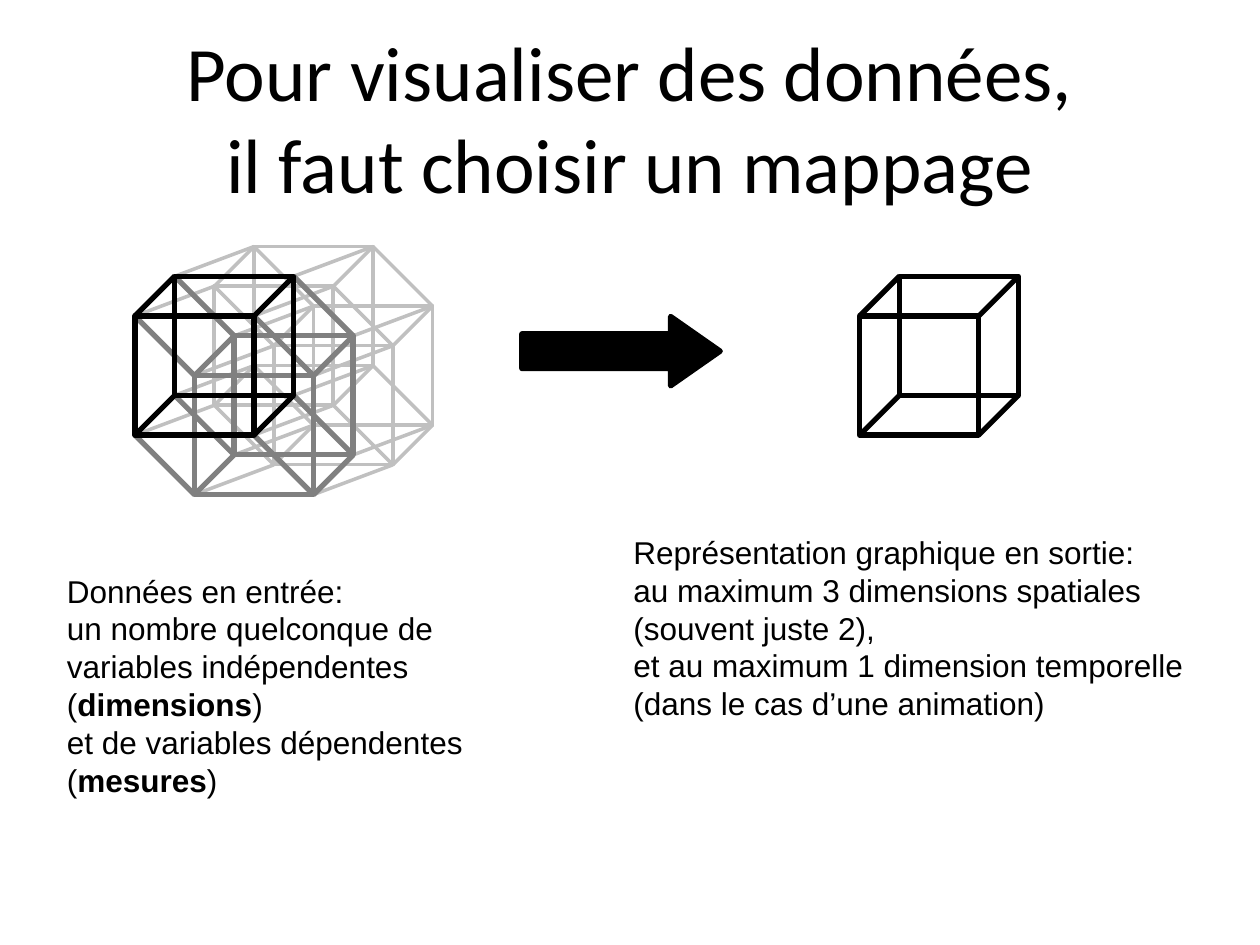
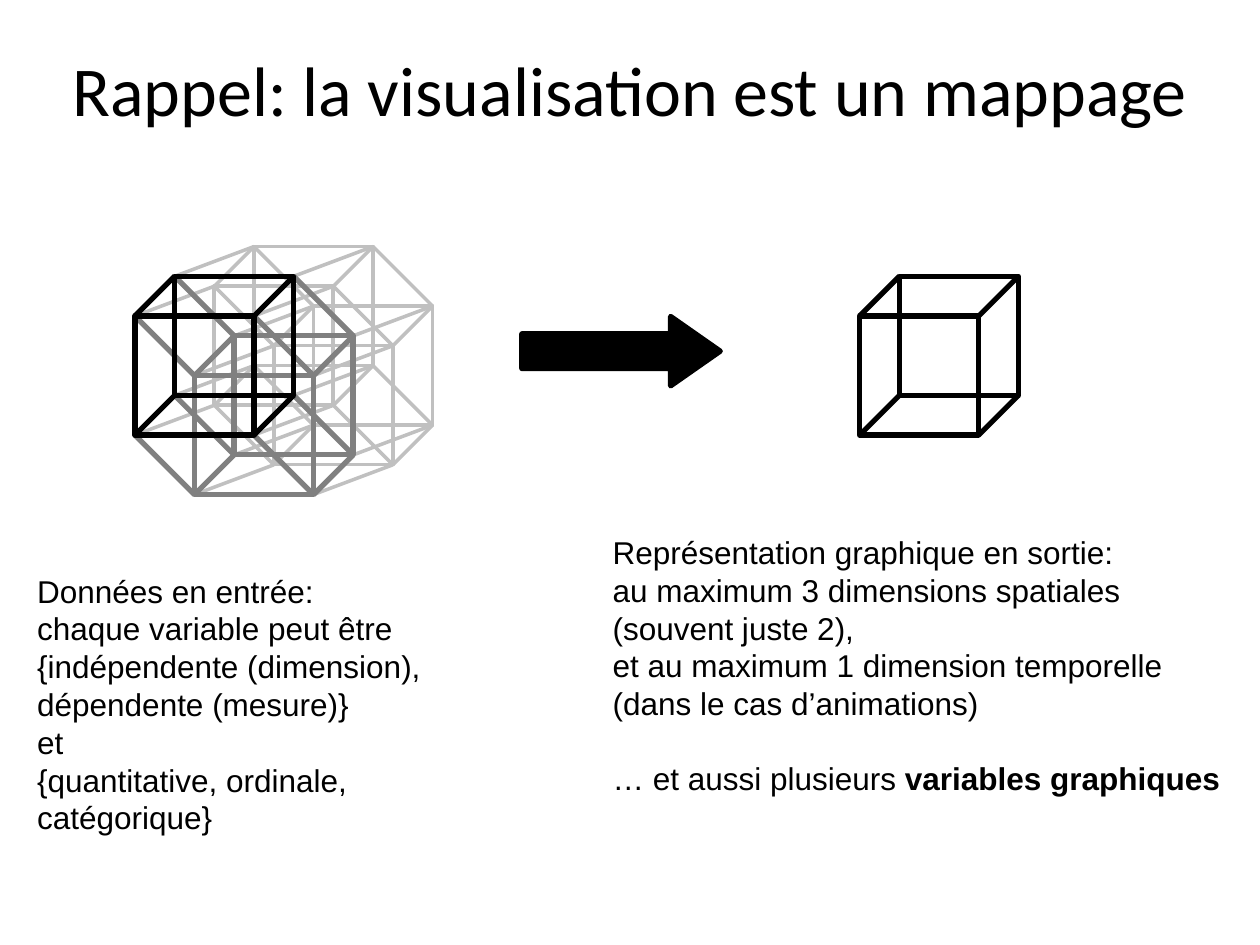
import itertools

import pptx
import pptx.dml.color
import pptx.enum.shapes
import pptx.enum.text
import pptx.oxml.ns
import pptx.util
from lxml import etree

CELL = pptx.util.Mm(2)  # one column or row of the grid
SIDE, DEPTH = 12, 4  # cube dimensions, in cells
NEAR_SHIFT = (6, 6)
FAR_SHIFT = (8, -3)
INPUT_CUBE, OUTPUT_CUBE = (13.6, 31.85), (86.65, 31.85)
BLACK, GREY, SILVER = "000000", "808080", "C0C0C0"
HEADING_FONT, TEXT_FONT = "Calibri", "Arial"


def rgb(hex_code):
    return pptx.dml.color.RGBColor.from_string(hex_code)


def cells(*counts):
    return [round(count * CELL) for count in counts]


def shifted(point, shift):
    return point[0] + shift[0], point[1] + shift[1]


def corners(cube):
    """The eight corners of a cube given by its front top left corner."""
    offsets = itertools.product((0, DEPTH), (0, SIDE), (0, SIDE))
    return [shifted(cube, (across + back, down - back)) for back, down, across in offsets]


class MappingDeck:
    def __init__(self):
        self.presentation = pptx.Presentation()
        self.presentation.slide_width = pptx.util.Inches(10)
        self.presentation.slide_height = pptx.util.Inches(7.5)
        self.slide = None

    def style(self, paragraph, font_name, size):
        paragraph.font.name = font_name
        paragraph.font.size = pptx.util.Pt(size)
        paragraph.font.color.rgb = rgb(BLACK)

    def outline(self, element, color, weight):
        element.line.color.rgb = rgb(color)
        element.line.width = pptx.util.Pt(weight)

    def new_slide(self, heading, left, top, width, size):
        """Add a slide; left, top and width are shares of the slide's size."""
        deck = self.presentation
        self.slide = deck.slides.add_slide(deck.slide_layouts[5])
        title = self.slide.shapes.title
        title.left, title.width = (round(share * deck.slide_width) for share in (left, width))
        title.top, title.height = (round(share * deck.slide_height) for share in (top, 1 / 6))
        frame = title.text_frame
        frame.auto_size = pptx.enum.text.MSO_AUTO_SIZE.NONE
        frame.vertical_anchor = pptx.enum.text.MSO_ANCHOR.MIDDLE
        paragraph = frame.paragraphs[0]
        paragraph.text = heading.replace("\n", "\v")
        paragraph.alignment = pptx.enum.text.PP_ALIGN.CENTER
        self.style(paragraph, HEADING_FONT, size)

    def edge(self, start, end, color, weight):
        connector = self.slide.shapes.add_connector(
            pptx.enum.shapes.MSO_CONNECTOR.STRAIGHT, *cells(*start, *end))
        self.outline(connector, color, weight)
        etree.SubElement(connector._element.spPr, pptx.oxml.ns.qn("a:effectLst"))

    def face(self, corner, color, weight):
        square = self.slide.shapes.add_shape(
            pptx.enum.shapes.MSO_SHAPE.RECTANGLE, *cells(*corner, SIDE, SIDE))
        square.shadow.inherit = False
        square.fill.background()
        self.outline(square, color, weight)

    def cube(self, front, color=BLACK, weight=3):
        points = corners(front)
        self.face(front, color, weight)
        for front_corner, back_corner in zip(points[:4], points[4:]):
            self.edge(back_corner, front_corner, color, weight)
        self.face(points[4], color, weight)

    def links(self, cube, shift, color, weight):
        """Join each corner of a cube to the same corner of its shifted twin."""
        for corner in corners(cube):
            self.edge(corner, shifted(corner, shift), color, weight)

    def hypercube(self, cube):
        """Draw a five-dimensional cube, from its farthest part to its nearest."""
        near, far = shifted(cube, NEAR_SHIFT), shifted(cube, FAR_SHIFT)
        for start in (near, cube):
            self.links(start, FAR_SHIFT, SILVER, 2)
        for first, second, color, weight in ((far, shifted(far, NEAR_SHIFT), SILVER, 2),
                                             (cube, near, GREY, 3)):
            self.cube(second, color, weight)
            self.links(first, NEAR_SHIFT, color, weight)
            self.cube(first, BLACK if first == cube else color, weight)

    def arrow(self, left, top, width, height):
        arrow = self.slide.shapes.add_shape(
            pptx.enum.shapes.MSO_SHAPE.RIGHT_ARROW, *cells(left, top, width, height))
        arrow.adjustments[0], arrow.adjustments[1] = 0.5, 0.715
        arrow.shadow.inherit = False
        arrow.fill.solid()
        arrow.fill.fore_color.rgb = rgb(BLACK)
        self.outline(arrow, BLACK, 3)

    def caption(self, left, top, width, height, *passages, gap=0):
        """Write passages in which ** surrounds bold words; gap is in points."""
        box = self.slide.shapes.add_textbox(*cells(left, top, width, height))
        frame = box.text_frame
        frame.word_wrap = True
        frame.auto_size = pptx.enum.text.MSO_AUTO_SIZE.SHAPE_TO_FIT_TEXT
        for index, passage in enumerate(passages):
            paragraph = frame.add_paragraph() if index else frame.paragraphs[0]
            if index and gap:
                paragraph.space_before = pptx.util.Pt(gap)
            for part, words in enumerate(passage.split("**")):
                for number, line in enumerate(words.split("\n")):
                    if number:
                        paragraph.add_line_break()
                    if line:
                        run = paragraph.add_run()
                        run.text = line
                        if part % 2:
                            run.font.bold = True
            self.style(paragraph, TEXT_FONT, 18)

    def mapping(self):
        """Draw the input hypercube, the arrow and the output cube."""
        self.hypercube(INPUT_CUBE)
        self.arrow(52.6, 31.9, 20, 7)
        self.cube(OUTPUT_CUBE)


def output_text(example):
    return ("Représentation graphique en sortie:\n"
            "au maximum 3 dimensions spatiales (souvent juste 2),\n"
            "et au maximum 1 dimension temporelle\n"
            f"(dans le cas {example})")


def main():
    deck = MappingDeck()

    deck.new_slide("Pour visualiser des données,\nil faut choisir un mappage",
                   0.05, 0.04, 0.9, 44)
    deck.mapping()
    deck.caption(5.5, 57, 44.2, 24.4,
                 "Données en entrée:\nun nombre quelconque de",
                 "variables indépendentes\n(**dimensions**)\n"
                 "et de variables dépendentes (**mesures**)")
    deck.caption(62.6, 53.1, 60.6, 20.6, output_text("d’une animation"))

    deck.new_slide("Rappel: la visualisation est un mappage", 0, 0.01, 1, 40)
    deck.mapping()
    deck.caption(2.5, 57, 50.2, 28.2,
                 "Données en entrée:\nchaque variable peut être",
                 "{indépendente (dimension),\ndépendente (mesure)}",
                 "et\n{quantitative, ordinale, catégorique}")
    deck.caption(60.5, 53.1, 65, 28.2, output_text("d’animations"),
                 "… et aussi plusieurs **variables graphiques**", gap=21)

    deck.presentation.save("out.pptx")


if __name__ == "__main__":
    main()
